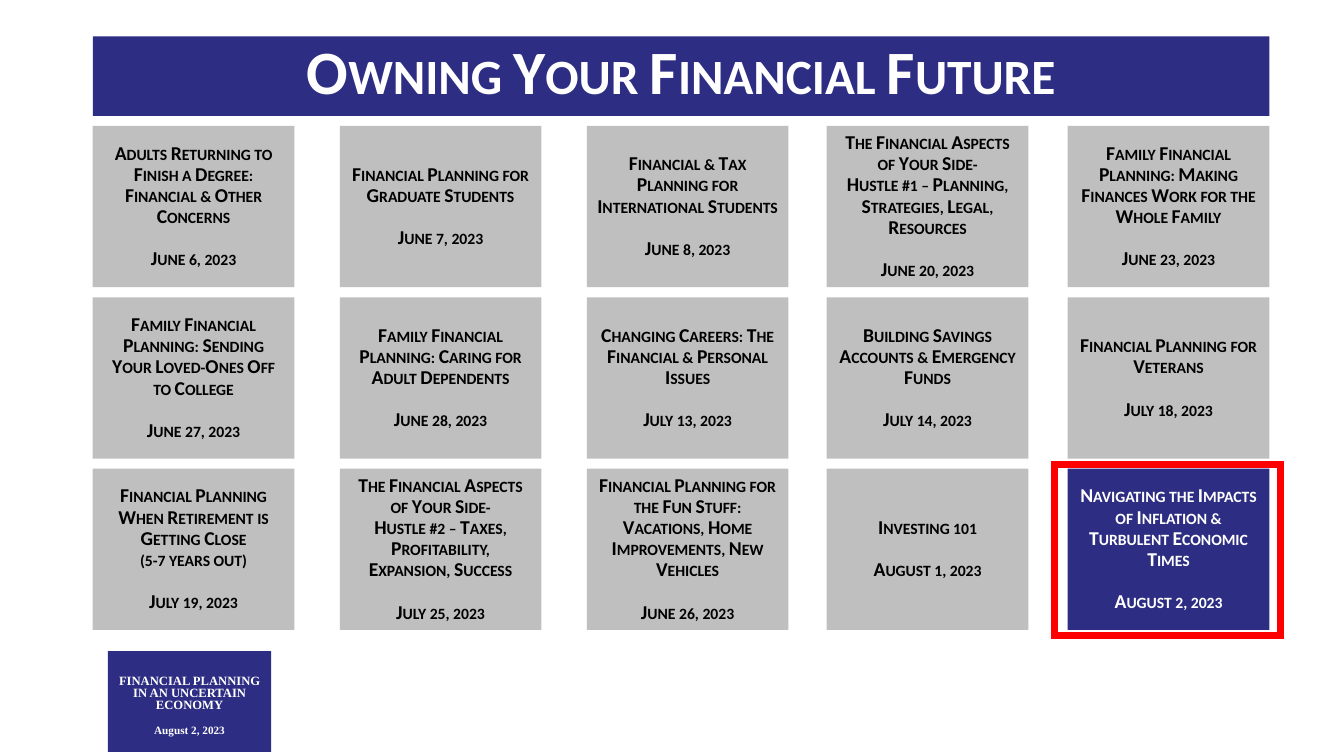
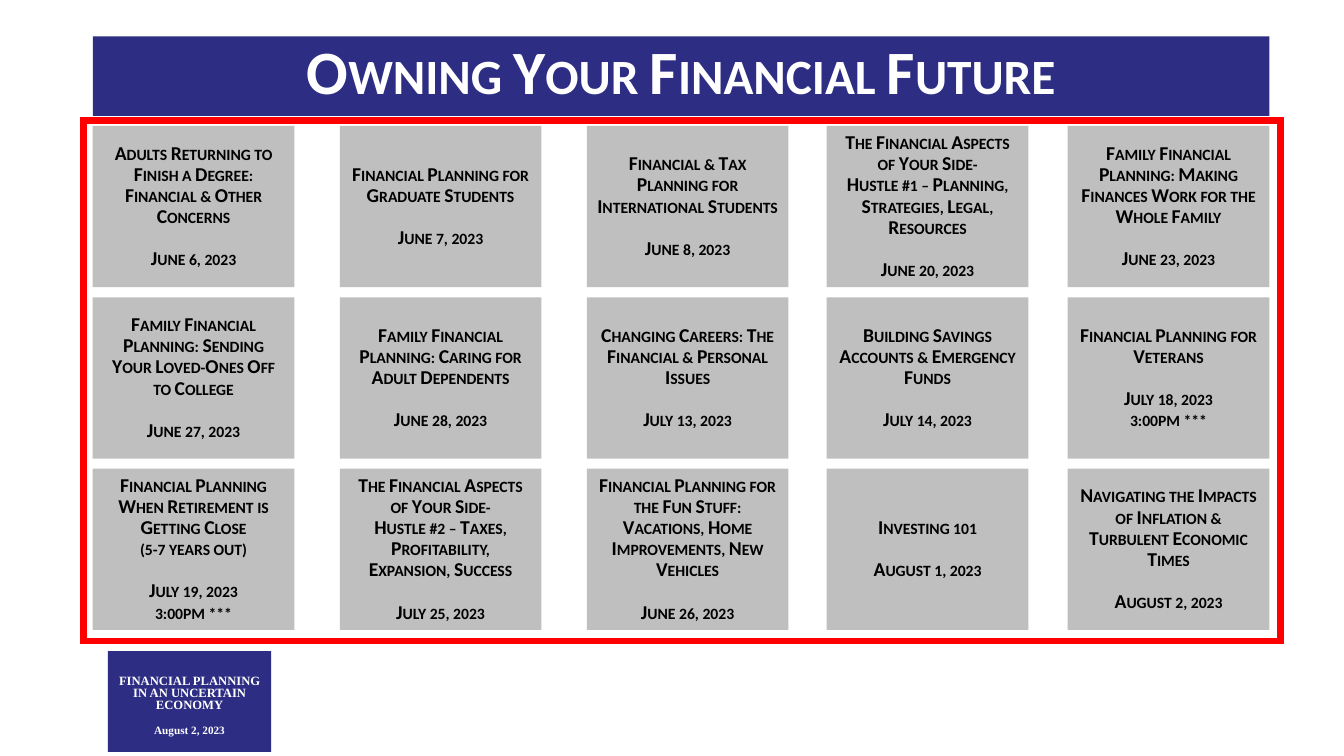
from copy import deepcopy

from lxml import etree
from pptx import Presentation, util as u
from pptx.dml.color import RGBColor
from pptx.enum import shapes, text
from pptx.oxml import ns

NAVY = RGBColor(0x2D, 0x2D, 0x83)
GRAY = RGBColor(0xBF, 0xBF, 0xBF)
RED = RGBColor(0xFF, 0x00, 0x00)
BLACK = RGBColor(0x00, 0x00, 0x00)
WHITE = RGBColor(0xFF, 0xFF, 0xFF)

SLIDE_SIZE = (13.33, 7.5)
COLUMNS = (0.92, 3.37, 5.82, 8.2, 10.59)
ROW_TOP, ROW_STEP = 1.25, 1.7
CARD_SIZE = (2, 1.6)

TITLE_FORMAT = {"name": "Calibri", "size": u.Pt(44), "bold": True}
CARD_FORMAT = {"name": "Calibri", "size": u.Pt(14), "bold": True}
BADGE_FORMAT = {"name": "Times New Roman", "size": u.Pt(9), "bold": True}
BADGE_DATE_FORMAT = {**BADGE_FORMAT, "size": u.Pt(8)}

SESSIONS = (
    ("Adults Returning to Finish a Degree: Financial & Other Concerns", "June 6, 2023"),
    ("Financial Planning for Graduate Students", "June 7, 2023"),
    ("Financial & Tax Planning for International Students", "June 8, 2023"),
    ("The Financial Aspects of Your Side-\vHustle #1 – Planning, Strategies, Legal, Resources",
     "June 20, 2023"),
    ("Family Financial Planning: Making Finances Work for the Whole Family", "June 23, 2023"),
    ("Family Financial Planning: Sending Your Loved-Ones Off to College", "June 27, 2023"),
    ("Family Financial Planning: Caring for Adult Dependents", "June 28, 2023"),
    ("Changing Careers: The Financial & Personal Issues", "July 13, 2023"),
    ("Building Savings Accounts & Emergency Funds", "July 14, 2023"),
    ("Financial Planning for Veterans", "July 18, 2023"),
    ("Financial Planning When Retirement is Getting Close\v(5-7 years out)", "July 19, 2023"),
    ("The Financial Aspects of Your Side-\vHustle #2 – Taxes, Profitability, Expansion, Success",
     "July 25, 2023"),
    ("Financial Planning for the Fun Stuff: Vacations, Home Improvements, New Vehicles",
     "June 26, 2023"),
    ("Investing 101", "August 1, 2023"),
    ("Navigating the Impacts of Inflation & Turbulent Economic Times", "August 2, 2023"),
)
LAST = len(SESSIONS) - 1
VETERANS, RETIREMENT = 9, 10
START_TIMES = {VETERANS: "3:00pm ***", RETIREMENT: "3:00pm ***"}


def card_position(index):
    row, column = divmod(index, len(COLUMNS))
    return COLUMNS[column], ROW_TOP + row * ROW_STEP


class Deck:
    def __init__(self):
        self.presentation = Presentation()
        self.presentation.slide_width, self.presentation.slide_height = map(u.Inches, SLIDE_SIZE)
        self.slide = None

    def new_slide(self):
        layout = self.presentation.slide_layouts.get_by_name("Title Only")
        self.slide = self.presentation.slides.add_slide(layout)
        self.badge()
        self.title("Owning Your Financial Future")

    def rectangle(self, left, top, width, height, fill=None):
        shape = self.slide.shapes.add_shape(
            shapes.MSO_SHAPE.RECTANGLE, *map(u.Inches, (left, top, width, height)))
        shape.shadow.inherit = False
        shape.line.fill.background()
        if fill is None:
            shape.fill.background()
        else:
            self.paint(shape, fill)
        return shape

    def paint(self, shape, color):
        shape.fill.solid()
        shape.fill.fore_color.rgb = color

    def add_text(self, frame, content, style, color, spacing=0.9, before=0, small_caps=True):
        paragraph = frame.paragraphs[0] if not frame.text else frame.add_paragraph()
        paragraph.text = content
        settings = {"alignment": text.PP_ALIGN.CENTER, "line_spacing": spacing,
                    "space_before": u.Pt(before), "space_after": u.Pt(0)}
        for name, value in settings.items():
            setattr(paragraph, name, value)
        for run in paragraph.runs:
            for name, value in style.items():
                setattr(run.font, name, value)
            run.font.color.rgb = color
            if small_caps:
                run._r.get_or_add_rPr().set("cap", "small")
        for line_break in paragraph._p.findall(ns.qn("a:br")):
            line_break.insert(0, deepcopy(paragraph.runs[0]._r.rPr))

    def title(self, content):
        shape = self.slide.shapes.title
        box = {"left": COLUMNS[0], "top": 0.36, "width": 11.67, "height": 0.79}
        for name, value in box.items():
            setattr(shape, name, u.Inches(value))
        self.paint(shape, NAVY)
        frame = shape.text_frame
        frame.auto_size = text.MSO_AUTO_SIZE.NONE
        frame.vertical_anchor = text.MSO_ANCHOR.TOP
        self.add_text(frame, content, TITLE_FORMAT, WHITE)

    def badge(self):
        frame = self.rectangle(1.07, 6.46, 1.62, 1, NAVY).text_frame
        settings = {"word_wrap": True, "vertical_anchor": text.MSO_ANCHOR.MIDDLE,
                    "margin_top": u.Inches(0.14), "margin_left": u.Inches(0.05),
                    "margin_right": u.Inches(0.05)}
        for name, value in settings.items():
            setattr(frame, name, value)
        self.add_text(frame, "FINANCIAL PLANNING IN AN UNCERTAIN ECONOMY", BADGE_FORMAT, WHITE,
                      spacing=0.8, small_caps=False)
        self.add_text(frame, "August 2, 2023", BADGE_DATE_FORMAT, WHITE,
                      spacing=0.8, before=10, small_caps=False)

    def card(self, index, highlighted=False, start_time=None):
        fill, color = (NAVY, WHITE) if highlighted else (GRAY, BLACK)
        name, date = SESSIONS[index]
        frame = self.rectangle(*card_position(index), *CARD_SIZE, fill).text_frame
        frame.word_wrap = True
        frame.vertical_anchor = text.MSO_ANCHOR.MIDDLE
        self.add_text(frame, name, CARD_FORMAT, color)
        self.add_text(frame, date, CARD_FORMAT, color, before=15)
        if start_time:
            self.add_text(frame, start_time, CARD_FORMAT, color)

    def schedule(self, highlighted=None, start_times=None):
        for index in range(len(SESSIONS)):
            self.card(index, index == highlighted, (start_times or {}).get(index))

    def outline(self, first, last, margins):
        left_margin, top_margin, right_margin, bottom_margin = margins
        left, top = card_position(first)
        right, bottom = (start + size for start, size in zip(card_position(last), CARD_SIZE))
        shape = self.rectangle(left - left_margin, top - top_margin,
                               right - left + left_margin + right_margin,
                               bottom - top + top_margin + bottom_margin)
        shape.line.color.rgb = RED
        shape.line.width = u.Pt(5)
        etree.SubElement(shape.line._get_or_add_ln(), ns.qn("a:miter"), lim="800000")


def main():
    deck = Deck()
    deck.new_slide()
    deck.schedule(highlighted=LAST)
    deck.outline(LAST, LAST, (0.13, 0.04, 0.11, 0.06))

    deck.new_slide()
    deck.schedule(start_times=START_TIMES)
    deck.outline(0, LAST, (0.09, 0.05, 0.11, 0.11))
    deck.presentation.save("out.pptx")


if __name__ == "__main__":
    main()
